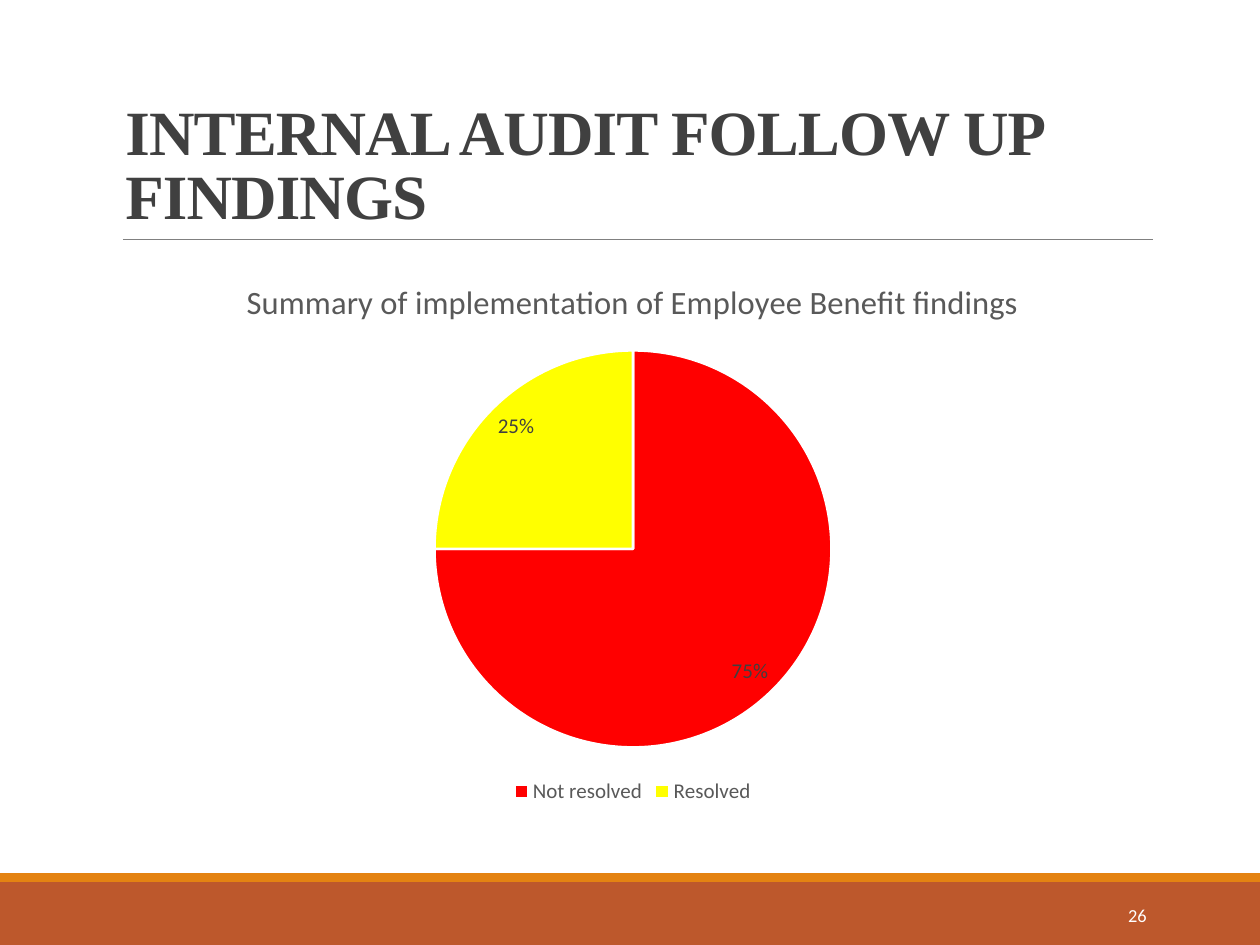
from dataclasses import dataclass

import pptx
import pptx.chart.data
import pptx.dml.color
import pptx.enum.chart
import pptx.enum.shapes
import pptx.enum.text
import pptx.oxml
import pptx.util
from pptx.oxml import ns

PX_PER_INCH = 126
WIDTH, HEIGHT = 1260, 945


@dataclass(frozen=True)
class Box:
    left: int
    top: int
    width: int
    height: int


@dataclass(frozen=True)
class Band:
    box: Box
    color: str


@dataclass(frozen=True)
class TextStyle:
    size: float
    color: str
    name: str = "Calibri"
    bold: bool = False


@dataclass(frozen=True)
class Slice:
    label: str
    share: float
    color: str


BANDS = [
    Band(Box(0, 882, WIDTH, 63), "BD582C"),
    Band(Box(0, 873, WIDTH, 9), "E48312"),
]
SLICES = [
    Slice("Not resolved", 0.75, "FF0000"),
    Slice("Resolved", 0.25, "FFFF00"),
]


def px(length: int) -> pptx.util.Emu:
    return pptx.util.Emu(round(length * 914400 / PX_PER_INCH))


def place(box: Box) -> list[pptx.util.Emu]:
    return [px(length) for length in (box.left, box.top, box.width, box.height)]


def rgb(color: str) -> pptx.dml.color.RGBColor:
    return pptx.dml.color.RGBColor.from_string(color)


def paint(fill, color: str) -> None:
    fill.solid()
    fill.fore_color.rgb = rgb(color)


def style_font(font, style: TextStyle) -> None:
    font.size = pptx.util.Pt(style.size)
    font.name = style.name
    font.bold = style.bold
    font.color.rgb = rgb(style.color)


def add_band(page, band: Band) -> None:
    shape = page.shapes.add_shape(
        pptx.enum.shapes.MSO_SHAPE.RECTANGLE, *place(band.box))
    shape.shadow.inherit = False
    paint(shape.fill, band.color)
    shape.line.fill.background()


def add_rule(page, left: int, right: int, top: int) -> None:
    rule = page.shapes.add_connector(
        pptx.enum.shapes.MSO_CONNECTOR.STRAIGHT,
        px(left), px(top), px(right), px(top))
    rule.line.color.rgb = rgb("808080")
    rule.line.width = pptx.util.Pt(0.5)
    rule._element.spPr.append(pptx.oxml.parse_xml(
        f"<a:effectLst {ns.nsdecls('a')}/>"))


def add_text(page, box: Box, text: str, style: TextStyle, anchor, align):
    shape = page.shapes.add_textbox(*place(box))
    frame = shape.text_frame
    frame.word_wrap = True
    frame.vertical_anchor = anchor
    frame.text = text
    para = frame.paragraphs[0]
    para.alignment = align
    style_font(para.runs[0].font, style)
    return para


def add_pie(page, box: Box, title: str, slices: list[Slice]) -> None:
    data = pptx.chart.data.CategoryChartData(number_format="0%")
    data.categories = [part.label for part in slices]
    data.add_series("Series 1", [part.share for part in slices])
    chart = page.shapes.add_chart(
        pptx.enum.chart.XL_CHART_TYPE.PIE, *place(box), data).chart
    style_font(chart.font, TextStyle(10, "000000"))

    # Chart title and legend
    chart.has_title = True
    heading = chart.chart_title.text_frame
    heading.text = title
    style_font(heading.paragraphs[0].runs[0].font, TextStyle(18.6, "595959"))
    chart.chart_title.include_in_layout = False
    chart.has_legend = True
    chart.legend.position = pptx.enum.chart.XL_LEGEND_POSITION.BOTTOM
    chart.legend.include_in_layout = False
    style_font(chart.legend.font, TextStyle(12, "595959"))

    # Slices and their labels
    plot = chart.plots[0]
    plot.vary_by_categories = True
    series = plot.series[0]
    for index, part in enumerate(slices):
        look = series.points[index].format
        paint(look.fill, part.color)
        look.line.color.rgb = rgb("FFFFFF")
        look.line.width = pptx.util.Pt(1.5)
    labels = series.data_labels
    labels.show_value = True
    labels.number_format = "0%"
    labels.number_format_is_linked = False
    labels.position = pptx.enum.chart.XL_LABEL_POSITION.INSIDE_END
    style_font(labels.font, TextStyle(12, "404040"))


def main() -> None:
    deck = pptx.Presentation()
    deck.slide_width, deck.slide_height = px(WIDTH), px(HEIGHT)
    page = deck.slides.add_slide(deck.slide_layouts[6])
    anchors = pptx.enum.text.MSO_ANCHOR
    aligns = pptx.enum.text.PP_ALIGN

    # Footer bands and title rule
    for band in BANDS:
        add_band(page, band)
    add_rule(page, 123, 1153, 239)

    # Title
    para = add_text(page, Box(113, 39, 1040, 200),
                    "INTERNAL AUDIT FOLLOW UP FINDINGS",
                    TextStyle(36, "404040", "Times New Roman", True),
                    anchors.BOTTOM, aligns.LEFT)
    para.line_spacing = 0.85
    para.runs[0].font._element.set("spc", "-50")

    # Chart
    add_pie(page, Box(113, 255, 1040, 554),
            "Summary of implementation of Employee Benefit findings", SLICES)

    # Page number
    add_text(page, Box(1023, 890, 136, 50), "26", TextStyle(10.5, "FFFFFF"),
             anchors.MIDDLE, aligns.RIGHT)

    deck.save("out.pptx")


if __name__ == "__main__":
    main()
